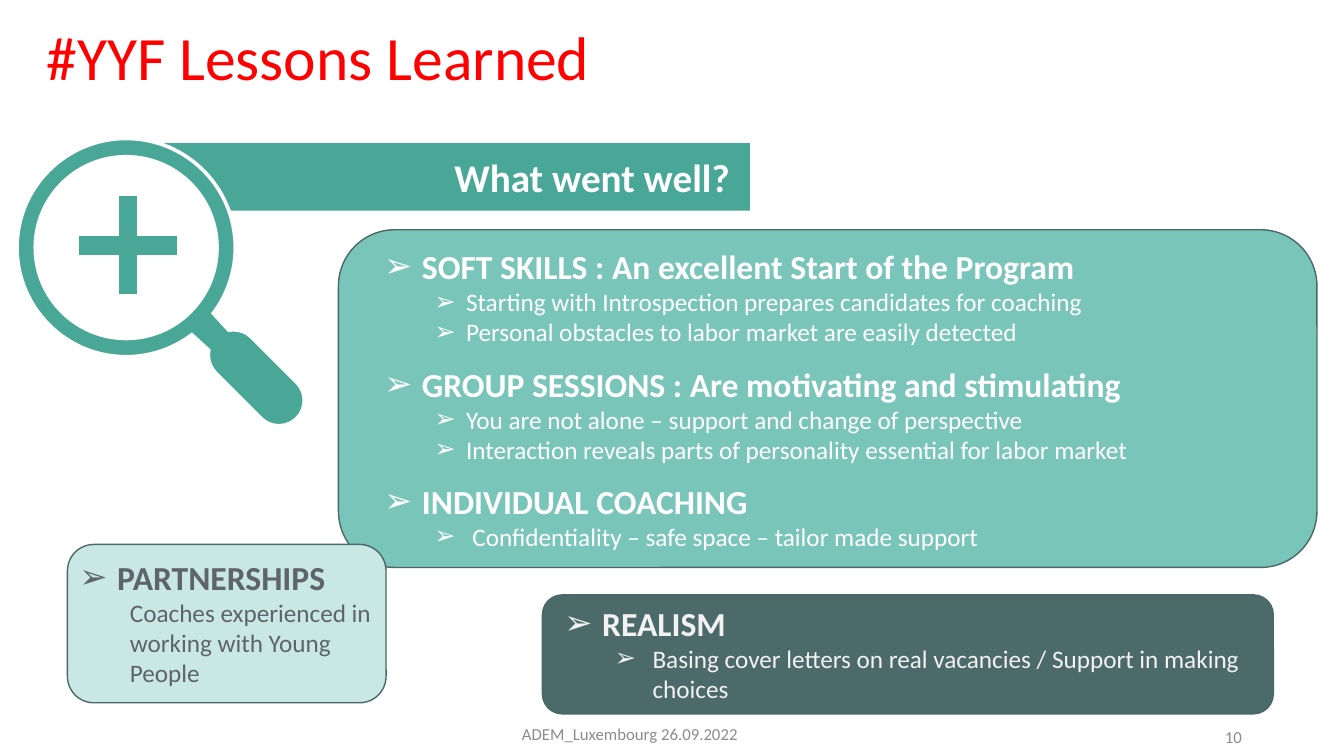
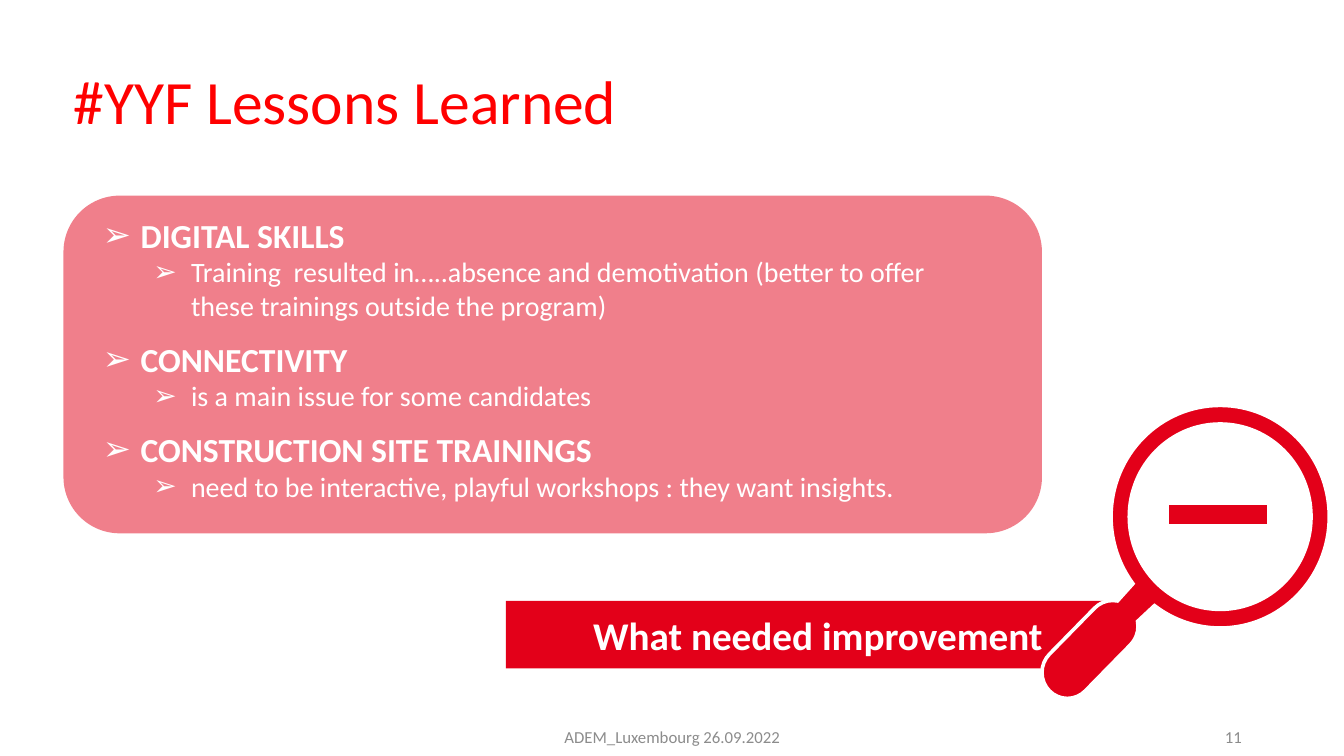
from dataclasses import dataclass
from math import cos, radians, sin, tan
from typing import NamedTuple

from lxml import etree
from pptx import Presentation
from pptx import util as u
from pptx.dml.color import RGBColor
from pptx.enum import shapes, text
from pptx.oxml.ns import qn

Point = tuple[float, float]  # centimetres
Segment = list[Point]  # one point: a line; three points: a curve
Contour = list[Segment]


# Theme
@dataclass(frozen=True)
class Theme:
    font: str = "Calibri"
    title_red: str = "FF0000"
    muted: str = "8C8C8C"
    white: str = "FFFFFF"
    off_white: str = "F2F2F2"
    slate: str = "5E646B"
    outline: str = "4B6868"
    green: str = "49A798"
    mid_green: str = "7AC5B9"
    pale_green: str = "CAE8E3"
    dark_green: str = "4C6A69"
    red: str = "E30019"
    title_size: float = 44
    banner_size: float = 28
    heading_size: float = 24
    large_detail_size: float = 20
    detail_size: float = 18
    footer_size: float = 12
    group_gap: float = 11.8


THEME = Theme()
BULLET = "➢"


class Area(NamedTuple):
    left: float
    top: float
    width: float
    height: float

    def lengths(self) -> list[u.Cm]:
        return [u.Cm(value) for value in self]


class Insets(NamedTuple):
    left: float
    top: float
    right: float
    bottom: float


class Style(NamedTuple):
    size: float
    color: str
    bold: bool = False
    align: text.PP_ALIGN = text.PP_ALIGN.LEFT
    anchor: text.MSO_ANCHOR = text.MSO_ANCHOR.MIDDLE


class Group(NamedTuple):
    heading: str
    details: list[str]
    margin: float = 2.22
    hanging: float = 0.95


@dataclass(frozen=True)
class Card:
    area: Area
    insets: Insets
    fill: str
    color: str
    groups: list[Group]
    outline: str | None = THEME.outline
    detail_size: float = THEME.detail_size
    opacity: int = 100


@dataclass(frozen=True)
class Lens:
    x: float
    y: float
    color: str
    plus: bool
    side: int = 1  # 1: handle to the right, -1: to the left
    stretch: float = 1.0


# Text
def set_font(para, size: float, color: str, bold: bool = False) -> None:
    for span in para.runs:
        span.font.name = THEME.font
        span.font.size = u.Pt(size)
        span.font.bold = bold
        span.font.color.rgb = RGBColor.from_string(color)


def set_insets(frame, insets: Insets) -> None:
    frame.margin_left, frame.margin_top, frame.margin_right, frame.margin_bottom = (
        u.Cm(value) for value in insets
    )


def write_line(frame, words: str, style: Style) -> None:
    frame.word_wrap = True
    frame.vertical_anchor = style.anchor
    frame.text = words
    para = frame.paragraphs[0]
    para.alignment = style.align
    set_font(para, style.size, style.color, style.bold)


def add_label(page, area: Area, words: str, style: Style):
    box = page.shapes.add_textbox(*area.lengths())
    write_line(box.text_frame, words, style)
    return box


def set_indent(para, margin: float, hanging: float) -> None:
    properties = para._p.get_or_add_pPr()
    properties.set("marL", str(u.Cm(margin)))
    properties.set("indent", str(-u.Cm(hanging)))
    if hanging:
        etree.SubElement(properties, qn("a:buFont")).set("typeface", THEME.font)
        etree.SubElement(properties, qn("a:buChar")).set("char", BULLET)
    para.alignment = text.PP_ALIGN.LEFT


def write_groups(frame, card: Card) -> None:
    for index, group in enumerate(card.groups):
        heading = frame.add_paragraph() if index else frame.paragraphs[0]
        heading.text = group.heading
        set_indent(heading, 0.95, 0.95)
        if index:
            heading.space_before = u.Pt(THEME.group_gap)
        set_font(heading, THEME.heading_size, card.color, bold=True)
        for detail in group.details:
            para = frame.add_paragraph()
            para.text = detail
            para.level = 1
            set_indent(para, group.margin, group.hanging)
            set_font(para, card.detail_size, card.color)


# Shapes
def paint(shape, fill: str, line: str | None = None, width: float = 1) -> None:
    shape.shadow.inherit = False
    shape.fill.solid()
    shape.fill.fore_color.rgb = RGBColor.from_string(fill)
    if line:
        shape.line.color.rgb = RGBColor.from_string(line)
        shape.line.width = u.Pt(width)
    else:
        shape.line.fill.background()


def add_card(page, card: Card) -> None:
    box = page.shapes.add_shape(shapes.MSO_SHAPE.ROUNDED_RECTANGLE, *card.area.lengths())
    paint(box, card.fill, card.outline)
    if card.opacity < 100:
        color = box._element.spPr.find(qn("a:solidFill"))[0]
        etree.SubElement(color, qn("a:alpha")).set("val", str(card.opacity * 1000))
    frame = box.text_frame
    frame.word_wrap = True
    frame.vertical_anchor = text.MSO_ANCHOR.TOP
    set_insets(frame, card.insets)
    write_groups(frame, card)


def polygon(*points: Point) -> Contour:
    return [[point] for point in points]


def arc(x: float, y: float, radius: float, start: int, end: int) -> Contour:
    """A line to the start of the arc, then one curve per quadrant."""
    low, high = sorted((start, end))
    stops = [low, *(stop for stop in range(-360, 451, 90) if low < stop < high), high]
    if end < start:
        stops.reverse()

    def spot(angle: float, pull: float = 0) -> Point:
        turn = radians(angle)
        return (x + radius * (cos(turn) - pull * sin(turn)),
                y + radius * (sin(turn) + pull * cos(turn)))

    contour = [[spot(start)]]
    for first, last in zip(stops, stops[1:]):
        pull = 4 / 3 * tan(radians(last - first) / 4)
        contour.append([spot(first, pull), spot(last, -pull), spot(last)])
    return contour


def add_outline(page, contours: list[Contour]):
    builder = None
    for contour in contours:
        points = [(u.Cm(x), u.Cm(y)) for segment in contour for x, y in segment]
        if builder is None:
            builder = page.shapes.build_freeform(*points[0], scale=1.0)
        else:
            builder.move_to(*points[0])
        builder.add_line_segments(points[1:], close=True)
    shape = builder.convert_to_shape()
    # Join the points of each curve
    lines = iter(list(shape._element.iter(qn("a:lnTo"))))
    for contour in contours:
        for segment in contour[1:]:
            first, *others = [next(lines) for _ in segment]
            if others:
                first.tag = qn("a:cubicBezTo")
                for other in others:
                    first.append(other[0])
                    other.getparent().remove(other)
    return shape


def add_banner(page, contour: Contour, color: str, words: str,
               align: text.PP_ALIGN, insets: Insets) -> None:
    banner = add_outline(page, [contour])
    paint(banner, color)
    set_insets(banner.text_frame, insets)
    write_line(banner.text_frame, words, Style(THEME.banner_size, THEME.white, True, align))


def add_magnifier(page, lens: Lens) -> None:
    # Ring, neck and rounded handle, around the lens centre
    body = (
        arc(0, 0, 2.75, 53, 397)
        + arc(2.71, 2.71, 0.64, -101, -45)
        + arc(3.85, 3.85, 0.64, -45, 135)
        + arc(2.71, 2.71, 0.64, 135, 191)
    )
    opening = arc(0, 0, 2.29, 0, 360)
    # Plus or minus sign
    long, thin = 1.28, 0.28
    if lens.plus:
        corners = [(thin, long), (thin, thin), (long, thin)]
        points = []
        for turn_x, turn_y in ((1, 1), (1, -1), (-1, -1), (-1, 1)):
            ordered = corners if turn_x == turn_y else corners[::-1]
            points += [(x * turn_x, y * turn_y) for x, y in ordered]
    else:
        points = [(-long, -thin), (long, -thin), (long, thin), (-long, thin)]
    sign = polygon(*((x + 0.05, y - 0.06) for x, y in points))
    contours = [
        [[(lens.x + lens.side * x, lens.y + lens.stretch * y) for x, y in segment]
         for segment in contour]
        for contour in (body, opening, sign)
    ]
    shape = add_outline(page, contours)
    paint(shape, lens.color, THEME.white, 2.59)
    line = shape._element.spPr.find(qn("a:ln"))
    etree.SubElement(line, qn("a:miter")).set("lim", "800000")


# Shared slide parts
def add_page(deck, title: Area, title_anchor: text.MSO_ANCHOR, footer: Area, number: int):
    page = deck.slides.add_slide(deck.slide_layouts[6])
    heading = add_label(page, title, "#YYF Lessons Learned",
                        Style(THEME.title_size, THEME.title_red, anchor=title_anchor))
    heading.text_frame.paragraphs[0].line_spacing = 0.9
    add_label(page, footer, "ADEM_Luxembourg 26.09.2022",
              Style(THEME.footer_size, THEME.muted, align=text.PP_ALIGN.CENTER))
    add_label(page, Area(23.93, 18.06, 7.62, 1.01), str(number),
              Style(THEME.footer_size, THEME.muted, align=text.PP_ALIGN.RIGHT))
    return page


# Slides
def build_successes(deck) -> None:
    page = add_page(deck, Area(0.92, 0.56, 27.36, 3.68), text.MSO_ANCHOR.TOP,
                    Area(10.16, 17.98, 11.43, 1.01), 10)
    lens = Lens(3.18, 6.24, THEME.green, plus=True)
    banner = polygon((3.56, 3.61), (18.9, 3.61), (18.9, 5.31))
    banner += arc(lens.x, lens.y, 2.6, -21, -82)
    add_banner(page, banner, lens.color, "What went well?", text.PP_ALIGN.RIGHT,
               Insets(0.51, 0.25, 0.51, 0.25))
    add_magnifier(page, lens)
    cards = [
        Card(Area(8.53, 5.79, 24.66, 8.51), Insets(0.74, 0, 1.14, 0),
             THEME.mid_green, THEME.white, [
            Group("SOFT SKILLS : An excellent Start of the Program", [
                "Starting with Introspection prepares candidates for coaching",
                "Personal obstacles to labor market are easily detected",
            ], 2.06, 0.79),
            Group("GROUP SESSIONS : Are motivating and stimulating", [
                "You are not alone – support and change of perspective",
                "Interaction reveals parts of personality essential for labor market",
            ], 2.06, 0.79),
            Group("INDIVIDUAL COACHING", [
                "Confidentiality – safe space – tailor made support",
            ]),
        ]),
        Card(Area(13.67, 14.99, 18.42, 3), Insets(0.41, 0.05, 0.28, 0),
             THEME.dark_green, THEME.off_white, [
            Group("REALISM", [
                "Basing cover letters on real vacancies / Support in making choices",
            ]),
        ]),
        Card(Area(1.7, 13.72, 8.03, 3.99), Insets(0.11, 0.12, 0, 0),
             THEME.pale_green, THEME.slate, [
            Group("PARTNERSHIPS", [
                "Coaches experienced in\nworking with Young People",
            ], 1.27, 0),
        ]),
    ]
    for card in cards:
        add_card(page, card)


def build_improvements(deck) -> None:
    page = add_page(deck, Area(1.6, 0.79, 27.36, 3.68), text.MSO_ANCHOR.MIDDLE,
                    Area(11.23, 18.06, 11.43, 1.01), 11)
    lens = Lens(30.75, 13.02, THEME.red, plus=False, side=-1, stretch=1.02)
    banner = polygon((12.75, 15.14), (28.22, 15.14), (28.22, 15.21), (26.29, 16.84),
                     (12.75, 16.84))
    add_banner(page, banner, lens.color, "What needed improvement", text.PP_ALIGN.LEFT,
               Insets(2.2, 0.13, 0.25, 0.13))
    add_magnifier(page, lens)
    add_card(page, Card(
        Area(1.6, 4.93, 24.66, 8.51), Insets(0.58, 0.06, 1.32, 0), THEME.red, THEME.white, [
            Group("DIGITAL SKILLS", [
                "Training  resulted in…..absence and demotivation "
                "(better to offer these trainings outside the program)",
            ]),
            Group("CONNECTIVITY", ["is a main issue for some candidates"]),
            Group("CONSTRUCTION SITE TRAININGS", [
                "need to be interactive, playful workshops : they want insights.",
            ]),
        ], outline=None, detail_size=THEME.large_detail_size, opacity=50))


def main() -> None:
    deck = Presentation()
    deck.slide_width, deck.slide_height = u.Cm(33.87), u.Cm(19.05)
    build_successes(deck)
    build_improvements(deck)
    deck.save("out.pptx")


if __name__ == "__main__":
    main()
